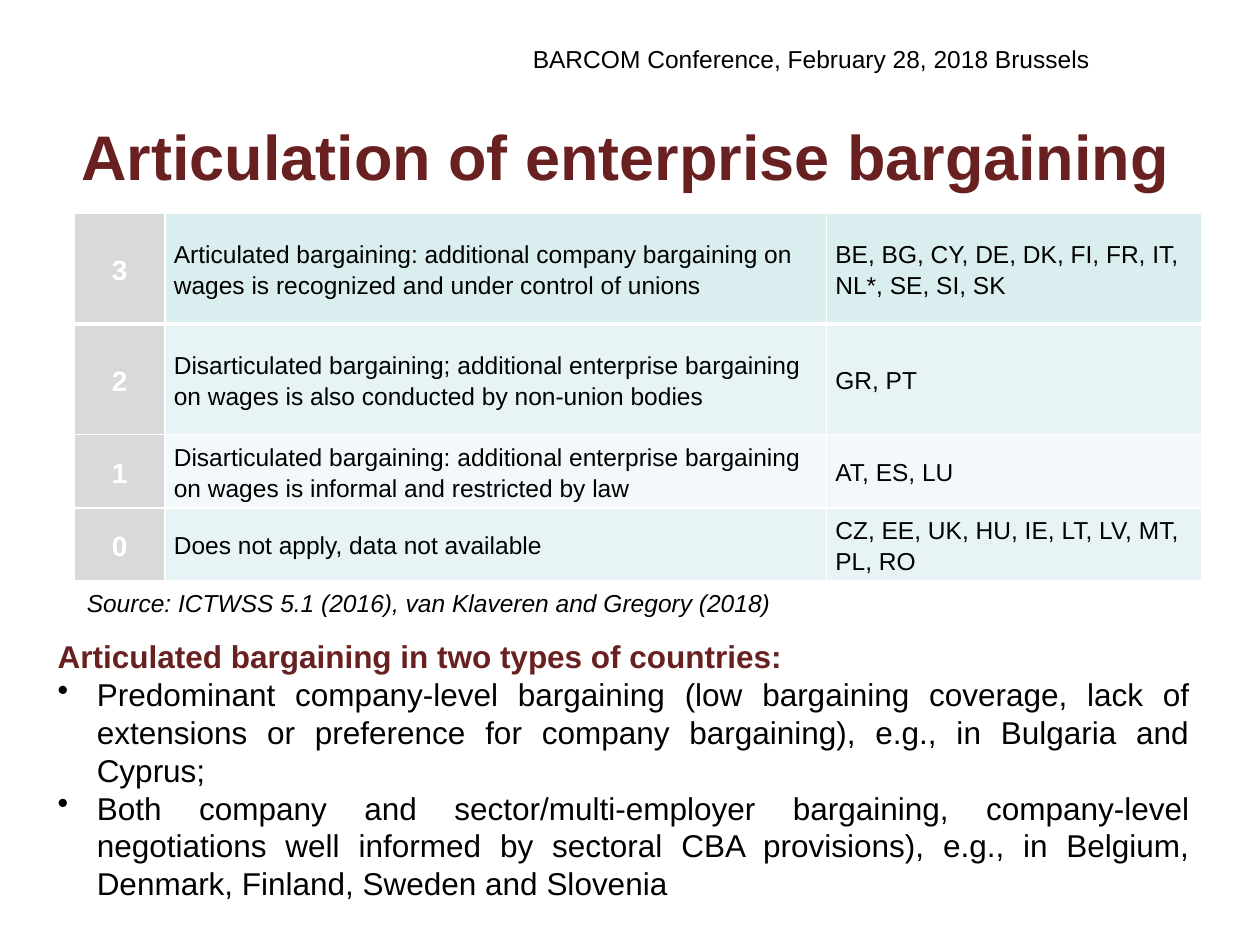
import pptx
import pptx.dml.color
import pptx.enum.text
import pptx.oxml
import pptx.oxml.ns
import pptx.util
from dataclasses import dataclass

Inches = pptx.util.Inches
Pt = pptx.util.Pt
ALIGN = pptx.enum.text.PP_ALIGN
MIDDLE = pptx.enum.text.MSO_ANCHOR.MIDDLE


@dataclass(frozen=True)
class Theme:
    font: str = "Arial"
    ink: str = "000000"
    maroon: str = "692020"
    white: str = "FFFFFF"
    grey: str = "D9D9D9"
    teal: str = "DAEDEF"
    band: str = "E7F3F4"
    pale: str = "F3F9FA"
    title: int = 36
    body: int = 18
    score: int = 16
    small: int = 14


T = Theme()


def write(tf, text, size=T.small, color=T.ink, bold=False, italic=False,
          align=ALIGN.LEFT, spacing=None, bullet=False, new=False):
    """Write one paragraph, in the first place or as a new one."""
    p = tf.add_paragraph() if new else tf.paragraphs[0]
    p.alignment = align
    if spacing:
        p.line_spacing = spacing
    if bullet:
        pPr = p._p.get_or_add_pPr()
        pPr.set("marL", str(Inches(0.31)))
        pPr.set("indent", str(Inches(-0.31)))
        bu = pptx.oxml.parse_xml(
            f'<a:buChar {pptx.oxml.ns.nsdecls("a")} char="•"/>')
        pPr.append(bu)
    r = p.add_run()
    r.text = text
    r.font.name = T.font
    r.font.size = Pt(size)
    r.font.bold = bold
    r.font.italic = italic
    r.font.color.rgb = pptx.dml.color.RGBColor.from_string(color)


def add_box(left, top, width, height):
    """Add a wrapping text box and return its text frame."""
    sp = s.shapes.add_textbox(Inches(left), Inches(top), Inches(width), Inches(height))
    sp.text_frame.word_wrap = True
    return sp.text_frame


prs = pptx.Presentation()
prs.slide_width, prs.slide_height = Inches(10), Inches(7.5)
s = prs.slides.add_slide(prs.slide_layouts[6])

# Conference line, title and source
write(add_box(4.13, 0.3, 4.89, 0.34), "BARCOM Conference, February 28, 2018 Brussels")
tf = add_box(0.28, 0.76, 9.37, 0.94)
tf.vertical_anchor = MIDDLE
write(tf, "Articulation of enterprise bargaining", size=T.title, color=T.maroon,
      bold=True, align=ALIGN.CENTER)
write(add_box(0.59, 4.62, 9.15, 0.33),
      "Source: ICTWSS 5.1 (2016), van Klaveren and Gregory (2018)", italic=True)

# Table of articulation scores: score, meaning, countries, row fill, row height
rows = [
    ("3", "Articulated bargaining: additional company bargaining on wages is "
          "recognized and under control of unions",
     "BE, BG, CY, DE, DK, FI, FR, IT, NL*, SE, SI, SK", T.teal, 0.88),
    ("2", "Disarticulated bargaining; additional enterprise bargaining on wages is "
          "also conducted by non-union bodies",
     "GR, PT", T.band, 0.88),
    ("1", "Disarticulated bargaining: additional enterprise bargaining on wages is "
          "informal and restricted by law",
     "AT, ES, LU", T.pale, 0.58),
    ("0", "Does not apply, data not available",
     "CZ, EE, UK, HU, IE, LT, LV, MT, PL, RO", T.band, 0.58),
]
tbl = s.shapes.add_table(len(rows), 3, Inches(0.59), Inches(1.69),
                         Inches(8.95), Inches(2.92)).table
tbl.first_row = tbl.horz_banding = False
for col, width in zip(tbl.columns, (0.72, 5.25, 2.98)):
    col.width = Inches(width)
for i, (*texts, row_fill, height) in enumerate(rows):
    tbl.rows[i].height = Inches(height)
    for j, text in enumerate(texts):
        cell = tbl.cell(i, j)
        cell.vertical_anchor = MIDDLE
        cell.margin_left = cell.margin_right = Inches(0.07)
        cell.margin_top = cell.margin_bottom = 0
        # White borders, thicker under the first row
        widths = {"L": 1, "R": 1, "T": 3 if i == 1 else 1, "B": 3 if i == 0 else 1}
        for side, w in widths.items():
            cell._tc.get_or_add_tcPr().append(pptx.oxml.parse_xml(
                f'<a:ln{side} {pptx.oxml.ns.nsdecls("a")} w="{Pt(w)}"><a:solidFill>'
                f'<a:srgbClr val="{T.white}"/></a:solidFill></a:ln{side}>'))
        cell.fill.solid()
        cell.fill.fore_color.rgb = pptx.dml.color.RGBColor.from_string(
            row_fill if j else T.grey)
        if j:
            write(cell.text_frame, text, spacing=1.15)
        else:
            write(cell.text_frame, text, size=T.score, color=T.white, bold=True,
                  align=ALIGN.CENTER, spacing=1.15)

# Two types of countries
tf = add_box(0.36, 5.01, 9.18, 2.22)
write(tf, "Articulated bargaining in two types of countries:", size=T.body,
      color=T.maroon, bold=True, align=ALIGN.JUSTIFY)
for text in (
    "Predominant company-level bargaining (low bargaining coverage, lack of extensions "
    "or preference for company bargaining), e.g., in Bulgaria and Cyprus;",
    "Both company and sector/multi-employer bargaining, company-level negotiations well "
    "informed by sectoral CBA provisions), e.g., in Belgium, Denmark, Finland, Sweden "
    "and Slovenia",
):
    write(tf, text, size=T.body, align=ALIGN.JUSTIFY, bullet=True, new=True)

prs.save("out.pptx")
